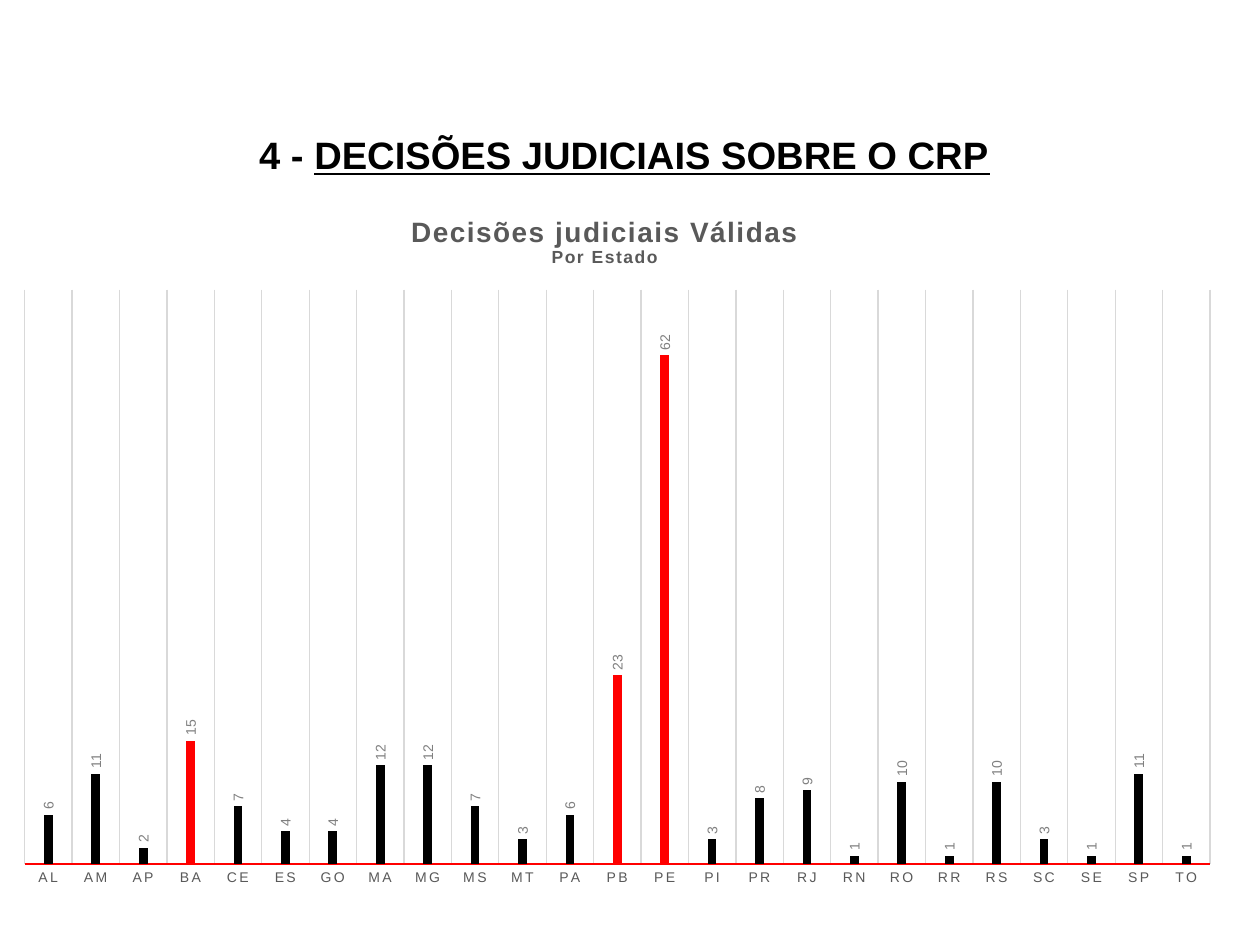
from dataclasses import dataclass

from lxml import etree
from pptx import Presentation
from pptx.chart.data import CategoryChartData
from pptx.dml.color import RGBColor
from pptx.enum import chart as chart_enum, text
from pptx.oxml import parse_xml
from pptx.oxml.ns import nsdecls, qn
from pptx.util import Inches, Pt

COLORS = {
    "black": "000000",
    "highlight": "FF0000",
    "grid": "D9D9D9",
    "axis": "595959",
    "label": "808080",
}
FONT = "Arial"
HIGHLIGHT_FROM = 15


@dataclass
class State:
    code: str
    decisions: int


@dataclass
class TitleLine:
    wording: str
    size: float


STATES = [
    State(*pair)
    for pair in [
        ("AL", 6), ("AM", 11), ("AP", 2), ("BA", 15), ("CE", 7),
        ("ES", 4), ("GO", 4), ("MA", 12), ("MG", 12), ("MS", 7),
        ("MT", 3), ("PA", 6), ("PB", 23), ("PE", 62), ("PI", 3),
        ("PR", 8), ("RJ", 9), ("RN", 1), ("RO", 10), ("RR", 1),
        ("RS", 10), ("SC", 3), ("SE", 1), ("SP", 11), ("TO", 1),
    ]
]
CHART_TITLE = [TitleLine("Decisões judiciais Válidas", 16), TitleLine("Por Estado", 10)]


def rgb(name: str) -> RGBColor:
    return RGBColor.from_string(COLORS[name])


def style_font(font, size: float, color: str, bold: bool = False) -> None:
    font.name = FONT
    font.size = Pt(size)
    font.bold = bold
    font.color.rgb = rgb(color)


def style_line(line, color: str) -> None:
    line.color.rgb = rgb(color)
    line.width = Pt(0.75)


def manual_layout(**position: float):
    layout = parse_xml(f"<c:layout {nsdecls('c')}><c:manualLayout/></c:layout>")
    manual = layout[0]
    if "w" in position:
        etree.SubElement(manual, qn("c:layoutTarget")).set("val", "inner")
    for mode in ("xMode", "yMode"):
        etree.SubElement(manual, qn(f"c:{mode}")).set("val", "edge")
    for key, value in position.items():
        etree.SubElement(manual, qn(f"c:{key}")).set("val", str(value))
    return layout


def set_layout(parent, layout, index: int) -> None:
    for old_layout in parent.findall(qn("c:layout")):
        parent.remove(old_layout)
    parent.insert(index, layout)


def add_heading(slide) -> None:
    box = slide.shapes.add_textbox(Inches(0.11), Inches(0.94), Inches(9.69), Inches(0.57))
    frame = box.text_frame
    frame.word_wrap = True
    frame.vertical_anchor = text.MSO_ANCHOR.MIDDLE
    paragraph = frame.paragraphs[0]
    paragraph.alignment = text.PP_ALIGN.CENTER
    for wording, underlined in (("4 - ", False), ("DECISÕES JUDICIAIS SOBRE O CRP", True)):
        run = paragraph.add_run()
        run.text = wording
        style_font(run.font, 21.8, "black", True)
        run.font.underline = underlined


def add_chart_title(chart) -> None:
    title = chart.chart_title
    frame = title.text_frame
    frame.text = "\n".join(line.wording for line in CHART_TITLE)
    for paragraph, line in zip(frame.paragraphs, CHART_TITLE):
        paragraph.alignment = text.PP_ALIGN.CENTER
        run = paragraph.runs[0]
        style_font(run.font, line.size, "axis", True)
        run.font._element.set("spc", "100")
    title.include_in_layout = False
    set_layout(title._element, manual_layout(x=0.33, y=0.03), 1)


def style_axes(chart) -> None:
    category_axis = chart.category_axis
    category_axis.has_major_gridlines = True
    category_axis.major_tick_mark = chart_enum.XL_TICK_MARK.NONE
    style_line(category_axis.major_gridlines.format.line, "grid")
    style_line(category_axis.format.line, "highlight")
    style_font(category_axis.tick_labels.font, 8, "axis")
    category_axis.tick_labels.font._element.set("spc", "120")
    value_axis = chart.value_axis
    value_axis.has_major_gridlines = False
    value_axis.minimum_scale = 0
    value_axis.maximum_scale = 70
    value_axis.visible = False


def style_columns(chart) -> None:
    plot = chart.plots[0]
    plot.gap_width = 444
    plot.overlap = -90
    plot.vary_by_categories = False
    series = plot.series[0]
    series.invert_if_negative = False
    series.format.fill.solid()
    series.format.fill.fore_color.rgb = rgb("black")
    for index, state in enumerate(STATES):
        if state.decisions >= HIGHLIGHT_FROM:
            fill = series.points[index].format.fill
            fill.solid()
            fill.fore_color.rgb = rgb("highlight")
    labels = series.data_labels
    labels.show_value = True
    labels.position = chart_enum.XL_LABEL_POSITION.OUTSIDE_END
    style_font(labels.font, 8, "label")
    body = labels._element.find(qn("c:txPr")).find(qn("a:bodyPr"))
    body.set("rot", "-5400000")
    body.set("vert", "horz")


def add_decisions_chart(slide) -> None:
    data = CategoryChartData()
    data.categories = [state.code for state in STATES]
    data.add_series("Series 1", [state.decisions for state in STATES])
    chart = slide.shapes.add_chart(
        chart_enum.XL_CHART_TYPE.COLUMN_CLUSTERED,
        Inches(0), Inches(1.51), Inches(9.8), Inches(5.63), data,
    ).chart
    chart.has_legend = False
    style_font(chart.font, 10, "black")
    add_chart_title(chart)
    style_axes(chart)
    style_columns(chart)
    plot_area = chart._chartSpace.chart.plotArea
    set_layout(plot_area, manual_layout(x=0.02, y=0.14, w=0.96, h=0.81), 0)


def main() -> None:
    presentation = Presentation()
    presentation.slide_width = Inches(10)
    presentation.slide_height = Inches(7.5)
    slide = presentation.slides.add_slide(presentation.slide_layouts[6])
    add_heading(slide)
    add_decisions_chart(slide)
    presentation.save("out.pptx")


if __name__ == "__main__":
    main()
